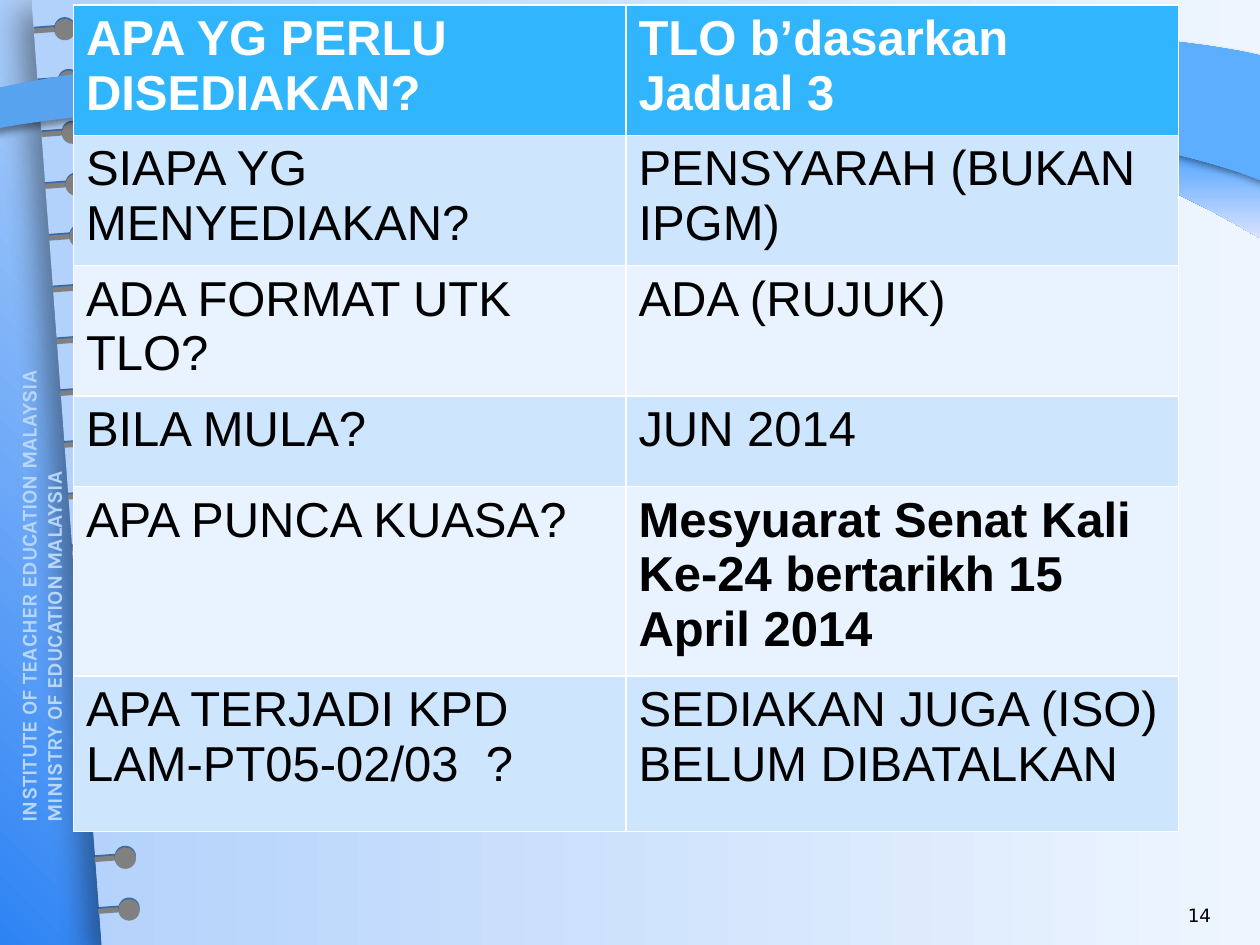
from typing import NamedTuple, Optional

from lxml.etree import SubElement
from pptx import Presentation
from pptx.dml.color import RGBColor
from pptx.enum.shapes import MSO_SHAPE
from pptx.enum.text import PP_ALIGN
from pptx.oxml.ns import qn
from pptx.util import Inches, Pt

COLOURS = {
    "margin_dark": "2D83F4", "margin_light": "B9D6FB",
    "page_left": "B2D1FB", "page_right": "EEF5FE",
    "ring": "808080", "ring_shadow": "073E87",
    "swoosh_top": "0080FF", "swoosh_bottom": "DAE2FF",
    "wave_left": "58A3EF", "wave_right": "5EAEFF",
    "header": "31B6FD", "band_dark": "CEE5FE", "band_light": "E8F3FF",
    "white": "FFFFFF", "black": "000000",
}
COLUMNS, ROWS = 100, 75  # the slide's grid
RING_COUNT, RING_TILT = 18, 355.8
RING_STEP = (0.3, 4.11)
FIRST_MASTER_ID = 100


class Gradient(NamedTuple):
    start: str
    end: str
    angle: int  # clockwise


class Shadow(NamedTuple):
    colour: str
    opacity: int
    blur: float
    distance: float
    direction: int


class Outline(NamedTuple):
    """A start point, then lines (one point) and curves (three points)."""
    start: tuple
    segments: list
    gradient: Gradient
    shadow: Optional[Shadow] = None


class Answer(NamedTuple):
    question: str
    answer: str
    height: float
    bold: tuple = (False, False)


MARGIN = Gradient("margin_dark", "margin_light", 315)
RING_SHADOW = Shadow("ring_shadow", 70, 0, 1, 270)

PAGE = Outline(
    (8.1, 75.3), [[(2.5, 0)], [(100, 0)], [(100, 75)]],
    Gradient("page_left", "page_right", 0), Shadow("black", 40, 18, 9, 135))
SWOOSH = Outline(
    (59.6, 8.1),
    [[(70.3, 9), (74, 9.4), (82.4, 11.3)], [(90.7, 13.2), (99.2, 18.5), (100, 18.9)],
     [(100.1, 14.1)], [(96.2, 12.4), (83.5, 9.5), (76.8, 8.5)]],
    Gradient("swoosh_top", "swoosh_bottom", 90))
WAVE = Outline(
    (-0.8, 10.3),
    [[(7.3, 8.7), (25.6, 7.4), (52, 7.8)], [(78.4, 8.2), (95.2, 12.2), (100, 14.3)],
     [(100, 4.4)], [(91.5, 2.3), (65.6, 1.2), (48.8, 1.7)],
     [(30.6, 2), (7, 5.4), (-0.8, 7.1)]],
    Gradient("wave_left", "wave_right", 0), Shadow("black", 40, 4, 3, 45))

ANSWERS = [
    Answer("APA YG PERLU DISEDIAKAN?", "TLO b’dasarkan Jadual 3", 7.2, (True, True)),
    Answer("SIAPA YG MENYEDIAKAN?", "PENSYARAH (BUKAN IPGM)", 7.2),
    Answer("ADA FORMAT UTK TLO?", "ADA (RUJUK)", 7.2),
    Answer("BILA MULA?", "JUN 2014", 7.2),
    Answer("APA PUNCA KUASA?", "Mesyuarat Senat Kali Ke-24 bertarikh 15 April 2014",
           12.35, (False, True)),
    Answer("APA TERJADI KPD LAM-PT05-02/03  ?", "SEDIAKAN JUGA (ISO) BELUM DIBATALKAN", 12.35),
]

deck = Presentation()
deck.slide_width, deck.slide_height = Inches(10), Inches(7.5)
slide = deck.slides.add_slide(deck.slide_layouts[6])


def across(columns: float) -> int:
    return round(deck.slide_width * columns / COLUMNS)


def down(rows: float) -> int:
    return round(deck.slide_height * rows / ROWS)


def place(left: float, top: float, width: float, height: float) -> tuple:
    return across(left), down(top), across(width), down(height)


def rgb(name: str) -> RGBColor:
    return RGBColor.from_string(COLOURS[name])


def add_shadow(shape, shadow: Optional[Shadow]) -> None:
    shape.shadow.inherit = False
    if shadow is None:
        return
    effects = shape._element.spPr.find(qn("a:effectLst"))
    outer = SubElement(effects, qn("a:outerShdw"), blurRad=str(Pt(shadow.blur)),
                       dist=str(Pt(shadow.distance)), dir=str(shadow.direction * 60000),
                       algn="ctr", rotWithShape="0")
    colour = SubElement(outer, qn("a:srgbClr"), val=COLOURS[shadow.colour])
    SubElement(colour, qn("a:alpha"), val=str(shadow.opacity * 1000))


def paint(shape, fill, shadow: Optional[Shadow] = None) -> None:
    if isinstance(fill, Gradient):
        shape.fill.gradient()
        shape.fill.gradient_angle = (360 - fill.angle) % 360
        for stop, name in zip(shape.fill.gradient_stops, (fill.start, fill.end)):
            stop.color.rgb = rgb(name)
    else:
        shape.fill.solid()
        shape.fill.fore_color.rgb = rgb(fill)
    shape.line.fill.background()
    add_shadow(shape, shadow)


def draw_outline(outline: Outline) -> None:
    points = [outline.start, *(point for segment in outline.segments for point in segment)]
    vertices = [(across(x), down(y)) for x, y in points]
    builder = slide.shapes.build_freeform(*vertices[0], scale=1.0)
    builder.add_line_segments(vertices[1:], close=True)
    shape = builder.convert_to_shape()
    # Join each three-point segment into one curve
    lines = iter(list(shape._element.iter(qn("a:lnTo"))))
    for segment in outline.segments:
        steps = [next(lines) for _ in segment]
        if len(steps) == 3:
            curve = SubElement(steps[0].getparent(), qn("a:cubicBezTo"))
            steps[0].addprevious(curve)
            for step in steps:
                curve.append(step[0])
                step.getparent().remove(step)
    paint(shape, outline.gradient, outline.shadow)


def draw_ring(binding, index: int) -> None:
    x, y = RING_STEP[0] * index, RING_STEP[1] * index
    for kind, box in ((MSO_SHAPE.RECTANGLE, (2.7 + x, 2.2 + y, 1.7, 0.4)),
                      (MSO_SHAPE.OVAL, (4.3 + x, 1.5 + y, 1.7, 1.7))):
        part = binding.shapes.add_shape(kind, *place(*box))
        part.rotation = RING_TILT
        paint(part, "ring", RING_SHADOW)


def write(paragraph, text: str, font: str, size: float, colour: str, bold: bool) -> None:
    run = paragraph.add_run()
    run.text = text
    run.font.name, run.font.size, run.font.bold = font, Pt(size), bold
    run.font.color.rgb = rgb(colour)


def move_to_master() -> None:
    tree = deck.slide_master.shapes._spTree
    for shape in list(slide.shapes):
        tree.append(shape._element)
        for number, label in enumerate(tree.iter(qn("p:cNvPr"))):
            label.set("id", str(FIRST_MASTER_ID + number))


def draw_answers(answers: list) -> None:
    frame = slide.shapes.add_table(len(answers), 2, *place(5.83, 0.4, 87.7, 72.8))
    for r, entry in enumerate(answers):
        frame.table.rows[r].height = down(entry.height)
        band = "header" if r == 0 else "band_dark" if r % 2 else "band_light"
        for c, text in enumerate((entry.question, entry.answer)):
            cell = frame.table.cell(r, c)
            cell.fill.solid()
            cell.fill.fore_color.rgb = rgb(band)
            write(cell.text_frame.paragraphs[0], text, "Arial", 28,
                  "black" if r else "white", entry.bold[c])
    frame.height = down(72.8)


# Notebook background
margin = slide.shapes.add_shape(MSO_SHAPE.RECTANGLE, *place(-0.1, 0, 9, 75.3))
paint(margin, MARGIN)
draw_outline(PAGE)
rings = slide.shapes.add_group_shape()
for ring in range(RING_COUNT):
    draw_ring(rings, ring)
draw_outline(SWOOSH)

# Institute name up the margin
institute = slide.shapes.add_textbox(*place(-15.9, 44.6, 38.3, 5))
institute.rotation = 270
institute.text_frame.word_wrap = False
write(institute.text_frame.paragraphs[0], "INSTITUTE OF TEACHER EDUCATION MALAYSIA",
      "Karla", 12, "margin_light", True)
write(institute.text_frame.add_paragraph(), "MINISTRY OF EDUCATION MALAYSIA",
      "Karla", 12, "margin_light", True)
draw_outline(WAVE)
move_to_master()

# Questions and answers
draw_answers(ANSWERS)

# Page number
page_number = slide.shapes.add_textbox(*place(90.6, 71.3, 9.2, 3.3))
page_number.text_frame.word_wrap = True
page_number.text_frame.paragraphs[0].alignment = PP_ALIGN.CENTER
write(page_number.text_frame.paragraphs[0], "14", "DejaVu Sans", 10.5, "black", False)

deck.save("out.pptx")
